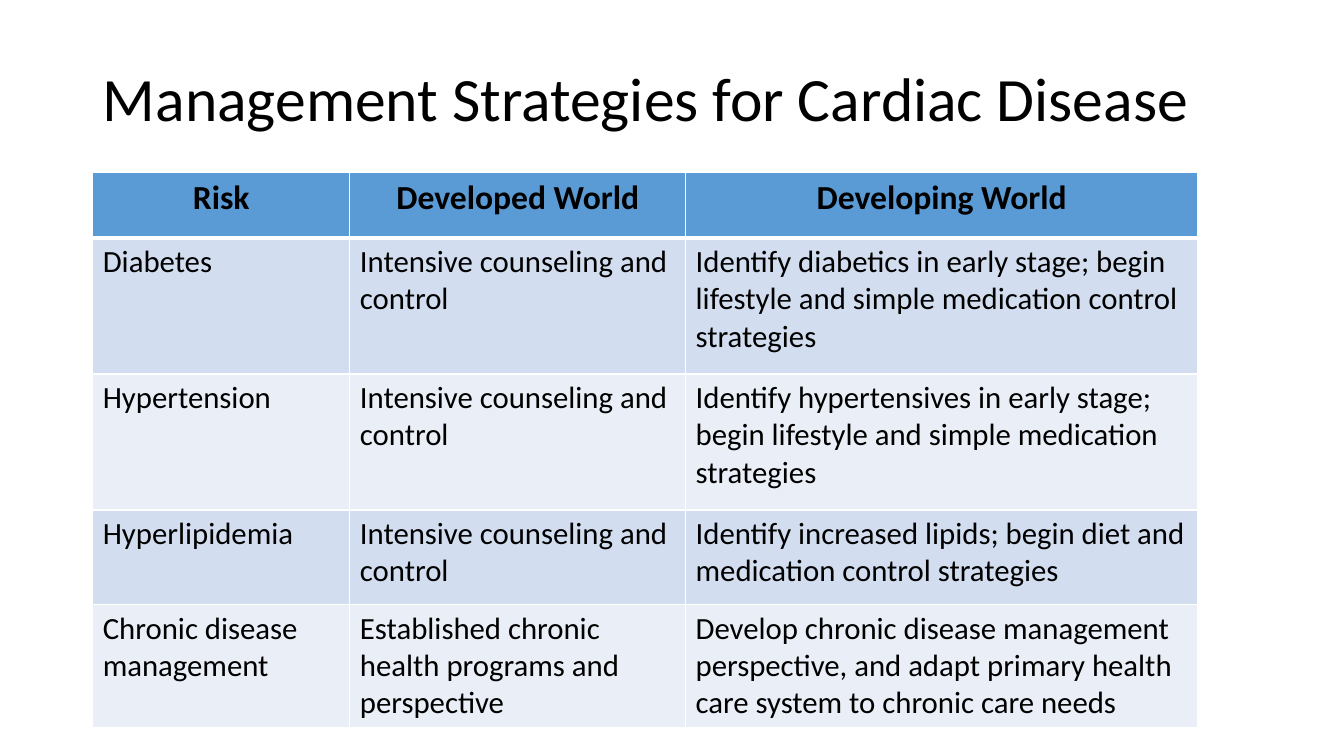
from dataclasses import dataclass

from lxml.etree import SubElement
from pptx import Presentation
from pptx.dml.color import RGBColor
from pptx.enum.text import MSO_ANCHOR as Anchor, PP_ALIGN as Align
from pptx.oxml.ns import qn
from pptx.util import Inches, Pt

TITLE_ONLY = 5

COLUMN_WIDTHS = (2.55, 3.33, 5.08)
ROW_HEIGHTS = (0.65, 1.35, 1.35, 0.94, 1.16)
COUNSELING = "Intensive counseling and control"
STRATEGIES = (
    ("Risk", "Developed World", "Developing World"),
    ("Diabetes", COUNSELING,
     "Identify diabetics in early stage; begin lifestyle and simple "
     "medication control strategies"),
    ("Hypertension", COUNSELING,
     "Identify hypertensives in early stage; begin lifestyle and simple "
     "medication strategies"),
    ("Hyperlipidemia", COUNSELING,
     "Identify increased lipids; begin diet and medication control strategies"),
    ("Chronic disease management",
     "Established chronic health programs and perspective",
     "Develop chronic disease management perspective, and adapt primary "
     "health care system to chronic care needs"),
)


@dataclass(frozen=True)
class Theme:
    font: str = "Calibri"
    text: str = "000000"
    border: str = "FFFFFF"
    header: str = "5B9BD5"
    bands: tuple = ("D2DEEF", "EAEFF7")
    title_size: int = 44
    header_size: int = 24
    body_size: int = 22
    thin: int = 1
    thick: int = 3


class SlideBuilder:
    def __init__(self, page, theme):
        self.page = page
        self.theme = theme

    def add_run(self, para, text, size, bold=False):
        span = para.add_run()
        span.text = text
        span.font.name = self.theme.font
        span.font.size = Pt(size)
        span.font.bold = bold
        span.font.color.rgb = RGBColor.from_string(self.theme.text)

    def title(self, text, left, top, width, height):
        box = self.page.shapes.title
        box.left, box.top = Inches(left), Inches(top)
        box.width, box.height = Inches(width), Inches(height)
        box.text_frame.vertical_anchor = Anchor.MIDDLE
        para = box.text_frame.paragraphs[0]
        para.alignment = Align.LEFT
        para.line_spacing = 0.9
        self.add_run(para, text, self.theme.title_size)

    def table(self, rows, left, top, widths, heights):
        frame = self.page.shapes.add_table(
            len(rows), len(widths), Inches(left), Inches(top),
            Inches(sum(widths)), Inches(sum(heights)))
        grid = frame.table
        for column, width in zip(grid.columns, widths):
            column.width = Inches(width)
        for row, height in zip(grid.rows, heights):
            row.height = Inches(height)
        for row_index, texts in enumerate(rows):
            for column_index, text in enumerate(texts):
                self.cell(grid.cell(row_index, column_index), text, row_index)

    def cell(self, cell, text, row_index):
        theme = self.theme
        is_header = row_index == 0
        self.borders(cell, top=theme.thick if row_index == 1 else theme.thin,
                     bottom=theme.thick if is_header else theme.thin)
        fill = theme.header if is_header else theme.bands[(row_index - 1) % 2]
        cell.fill.solid()
        cell.fill.fore_color.rgb = RGBColor.from_string(fill)
        para = cell.text_frame.paragraphs[0]
        para.alignment = Align.CENTER if is_header else Align.LEFT
        size = theme.header_size if is_header else theme.body_size
        self.add_run(para, text, size, bold=is_header)

    def borders(self, cell, top, bottom):
        """Draw the four cell edges; call before the cell is filled."""
        properties = cell._tc.get_or_add_tcPr()
        thin = self.theme.thin
        for side, width in (("L", thin), ("R", thin), ("T", top), ("B", bottom)):
            line = SubElement(properties, qn(f"a:ln{side}"), w=str(Pt(width)))
            solid = SubElement(line, qn("a:solidFill"))
            SubElement(solid, qn("a:srgbClr"), val=self.theme.border)


def main():
    deck = Presentation()
    deck.slide_width, deck.slide_height = Inches(13.33), Inches(7.5)
    page = deck.slides.add_slide(deck.slide_layouts[TITLE_ONLY])
    builder = SlideBuilder(page, Theme())
    builder.title("Management Strategies for Cardiac Disease",
                  0.92, 0.37, 11.5, 1.27)
    builder.table(STRATEGIES, 0.92, 1.71, COLUMN_WIDTHS, ROW_HEIGHTS)
    deck.save("out.pptx")


if __name__ == "__main__":
    main()
